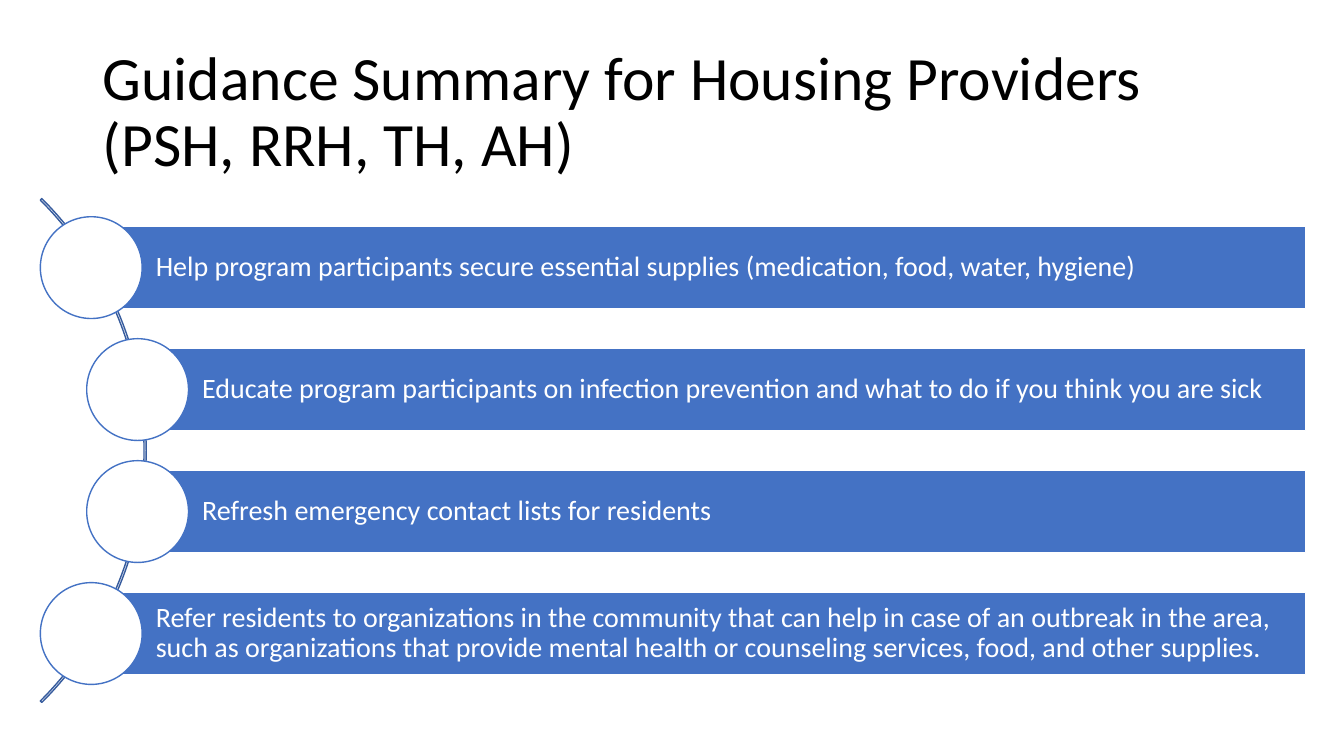
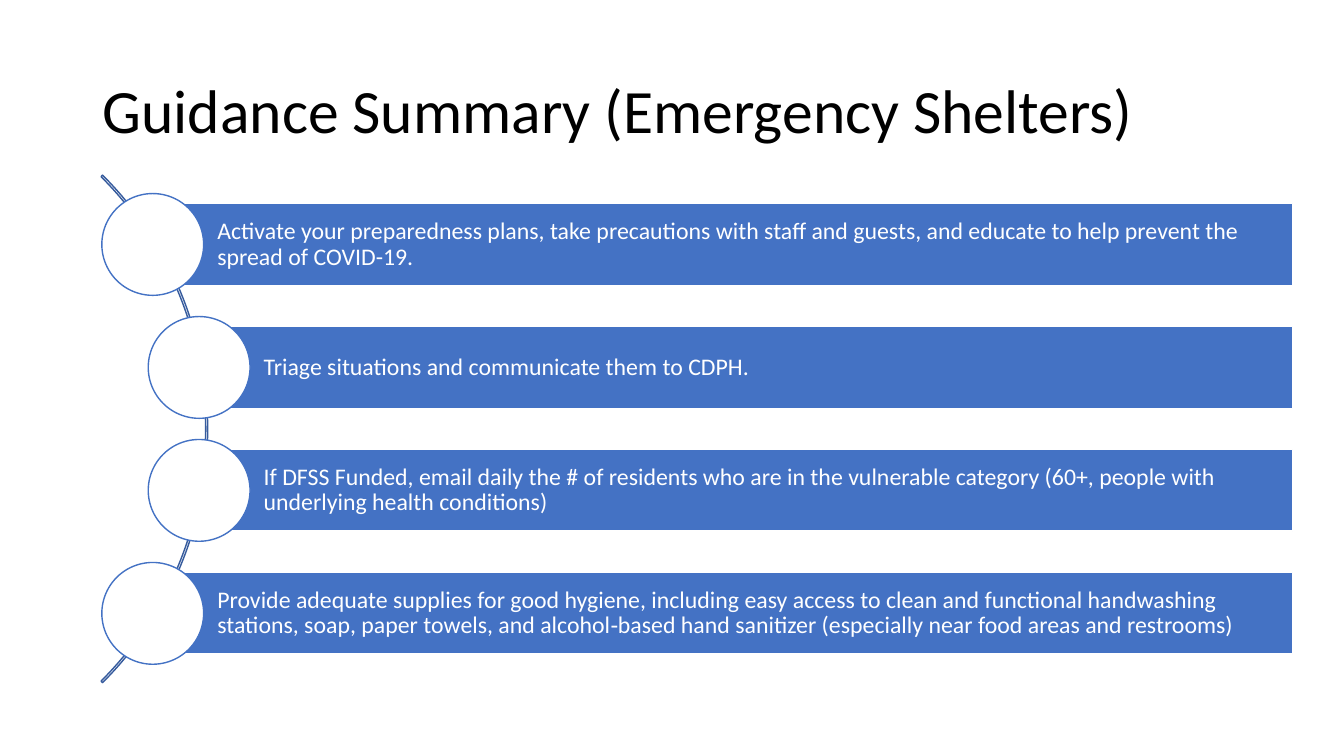
from pptx import Presentation
from pptx import util as u
from pptx.dml.color import RGBColor
from pptx.enum import shapes, text

BLUE = RGBColor(0x44, 0x72, 0xC4)
NAVY = RGBColor(0x36, 0x5B, 0x9D)
WHITE = RGBColor(255, 255, 255)
BLACK = RGBColor(0, 0, 0)

WIDE, HIGH = 13.33, 7.5
BAR, DISC, SHIFT, REACH = 0.81, 1.01, 0.46, 1.05
STEPS = (0, 1, 1, 0)
ARC = (189, 27, 0.003)
KIND = shapes.MSO_SHAPE

DECK = [
    {
        "title": "Guidance Summary for Housing Providers (PSH, RRH, TH, AH)",
        "left": 0.4, "right": 12.95, "top": 2.25, "pitch": 1.21,
        "ring": 7.07, "size": 20, "pad": 0.06,
        "items": [
            "Help program participants secure essential supplies (medication, food, water, hygiene)",
            "Educate program participants on infection prevention and what to do if you think you are sick",
            "Refresh emergency contact lists for residents",
            "Refer residents to organizations in the community that can help in case of an outbreak in the area, such as organizations that provide mental health or counseling services, food, and other supplies.",
        ],
    },
    {
        "title": "Guidance Summary (Emergency Shelters)",
        "left": 1.01, "right": 12.82, "top": 2.02, "pitch": 1.22,
        "ring": 7.12, "size": 17, "pad": 0.05,
        "items": [
            "Activate your preparedness plans, take precautions with staff and guests, and educate to help prevent the spread of COVID-19.",
            "Triage situations and communicate them to CDPH.",
            "If DFSS Funded, email daily the # of residents who are in the vulnerable category (60+, people with underlying health conditions)",
            "Provide adequate supplies for good hygiene, including easy access to clean and functional handwashing stations, soap, paper towels, and alcohol‐based hand sanitizer (especially near food areas and restrooms)",
        ],
    },
]


def place(*box):
    return [u.Inches(n) for n in box]


def write(shape, words, size, color, pads):
    frame = shape.text_frame
    form = {"word_wrap": True, "vertical_anchor": text.MSO_ANCHOR.MIDDLE}
    sides = ("margin_left", "margin_top", "margin_right", "margin_bottom")
    form.update(zip(sides, place(*pads)))
    for key, val in form.items():
        setattr(frame, key, val)
    para = frame.paragraphs[0]
    para.text = words
    para.alignment = text.PP_ALIGN.LEFT
    para.line_spacing = 0.9
    for key, val in {"name": "Calibri", "size": u.Pt(size)}.items():
        setattr(para.font, key, val)
    para.font.color.rgb = color


def draw(slide, kind, box, fill, line):
    shape = slide.shapes.add_shape(kind, *place(*box))
    shape.shadow.inherit = False
    if fill is None:
        shape.fill.background()
    else:
        shape.fill.solid()
        shape.fill.fore_color.rgb = fill
    shape.line.color.rgb = line
    shape.line.width = u.Pt(1)
    return shape


def build(slide, data):
    left, top, ring, pad = (data[k] for k in ("left", "top", "ring", "pad"))
    title = slide.shapes.add_textbox(*place(0.92, 0.4, 11.5, 1.45))
    write(title, data["title"], 44, BLACK, (0.1, 0.05, 0.1, 0.05))

    mid = top + ((len(STEPS) - 1) * data["pitch"] + BAR) / 2
    arc = draw(slide, KIND.BLOCK_ARC,
               (left + REACH - ring, mid - ring / 2, ring, ring), None, NAVY)
    for i, val in enumerate(ARC):
        arc.adjustments[i] = val

    for row, (step, words) in enumerate(zip(STEPS, data["items"])):
        x = left + step * SHIFT
        y = top + row * data["pitch"]
        start = x + DISC / 2
        bar = draw(slide, KIND.RECTANGLE,
                   (start, y, data["right"] - start, BAR), BLUE, WHITE)
        write(bar, words, data["size"], WHITE, (0.64, pad, pad, pad))
        draw(slide, KIND.OVAL,
             (x, y + (BAR - DISC) / 2, DISC, DISC), WHITE, BLUE)


def main():
    deck = Presentation()
    deck.slide_width, deck.slide_height = place(WIDE, HIGH)
    for data in DECK:
        build(deck.slides.add_slide(deck.slide_layouts[6]), data)
    deck.save("out.pptx")


if __name__ == "__main__":
    main()
